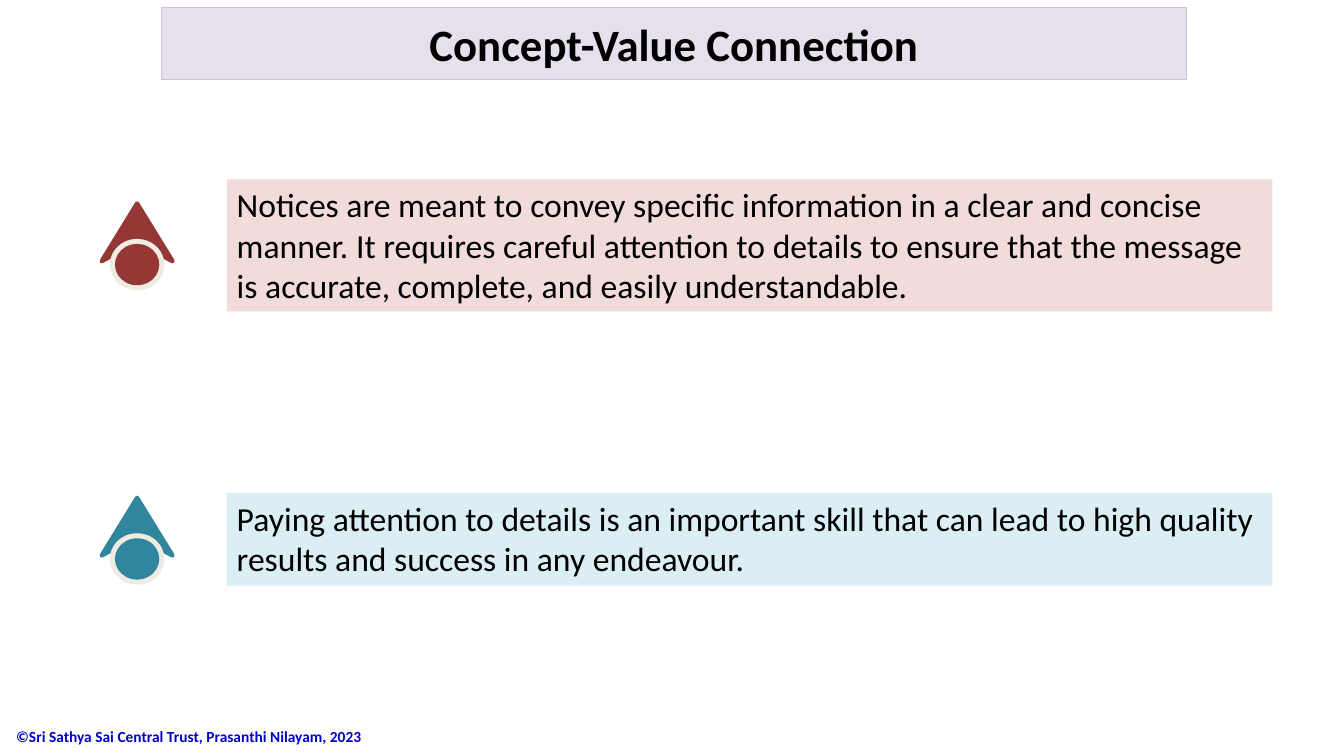
from dataclasses import dataclass

from pptx import Presentation
from pptx.dml.color import RGBColor
from pptx.enum.shapes import MSO_SHAPE as Kind
from pptx.enum.text import MSO_ANCHOR as Anchor, PP_ALIGN as Align
from pptx.shapes.autoshape import Shape
from pptx.slide import Slide
from pptx.util import Emu, Pt

PX = 9144
CREAM = "EEECE1"
ROOF = [
    (99, 58), (134, 1), (135, 0), (137, 0), (138, 1), (173, 58),
    (173, 60), (172, 61), (170, 61), (137, 43), (135, 43),
    (102, 61), (100, 61), (99, 60),
]


@dataclass(frozen=True)
class Box:
    x: int
    y: int
    w: int
    h: int


@dataclass(frozen=True)
class Style:
    size: int
    color: str = "000000"
    bold: bool = False
    align: Align = Align.LEFT
    anchor: Anchor = Anchor.TOP
    left: int = 10


@dataclass(frozen=True)
class Point:
    top: int
    dark: str
    pale: str
    box: Box
    text: str


POINTS = [
    Point(
        200, "953735", "F2DCDB", Box(225, 178, 1037, 131),
        "Notices are meant to convey specific information in a clear and "
        "concise manner. It requires careful attention to details to ensure "
        "that the message is accurate, complete, and easily understandable.",
    ),
    Point(
        492, "31859C", "DBEEF4", Box(225, 489, 1037, 92),
        "Paying attention to details is an important skill that can lead to "
        "high quality results and success in any endeavour.",
    ),
]


def px(n: int) -> Emu:
    return Emu(n * PX)


def rgb(code: str) -> RGBColor:
    return RGBColor.from_string(code)


def paint(shape: Shape, fill: str) -> None:
    shape.shadow.inherit = False
    shape.fill.solid()
    shape.fill.fore_color.rgb = rgb(fill)
    shape.line.fill.background()


def draw(slide: Slide, kind: Kind, box: Box, fill: str) -> Shape:
    shape = slide.shapes.add_shape(
        kind, px(box.x), px(box.y), px(box.w), px(box.h)
    )
    paint(shape, fill)
    return shape


def write(shape: Shape, text: str, style: Style) -> None:
    frame = shape.text_frame
    frame.word_wrap = True
    frame.vertical_anchor = style.anchor
    frame.margin_left, frame.margin_right = px(style.left), px(10)
    frame.margin_top = frame.margin_bottom = px(5)
    para = frame.paragraphs[0]
    para.alignment = style.align
    run = para.add_run()
    run.text = text
    run.font.name = "Calibri"
    run.font.size = Pt(style.size)
    run.font.bold = style.bold
    run.font.color.rgb = rgb(style.color)


def mark(slide: Slide, top: int, color: str) -> None:
    (x, y), *rest = [(x, top + y) for x, y in ROOF]
    path = slide.shapes.build_freeform(x, y, scale=PX)
    path.add_line_segments(rest, close=True)
    paint(path.convert_to_shape(), color)
    draw(slide, Kind.OVAL, Box(109, top + 37, 54, 51), CREAM)
    draw(slide, Kind.OVAL, Box(114, top + 42, 44, 41), color)


def main() -> None:
    deck = Presentation()
    deck.slide_width, deck.slide_height = px(1333), px(750)
    slide = deck.slides.add_slide(deck.slide_layouts[6])

    foot = slide.shapes.add_textbox(px(-44), px(710), px(431), px(41))
    write(
        foot, "©Sri Sathya Sai Central Trust, Prasanthi Nilayam, 2023",
        Style(11, "0000CC", True, anchor=Anchor.MIDDLE, left=60),
    )

    title = draw(slide, Kind.RECTANGLE, Box(160, 7, 1017, 72), "E6E0EC")
    title.line.color.rgb = rgb("CCC1DA")
    title.line.width = Pt(0.75)
    write(
        title, "Concept-Value Connection",
        Style(32, bold=True, align=Align.CENTER, anchor=Anchor.MIDDLE),
    )

    for point in POINTS:
        mark(slide, point.top, point.dark)
        panel = draw(slide, Kind.RECTANGLE, point.box, point.pale)
        write(panel, point.text, Style(24))

    deck.save("out.pptx")


if __name__ == "__main__":
    main()
